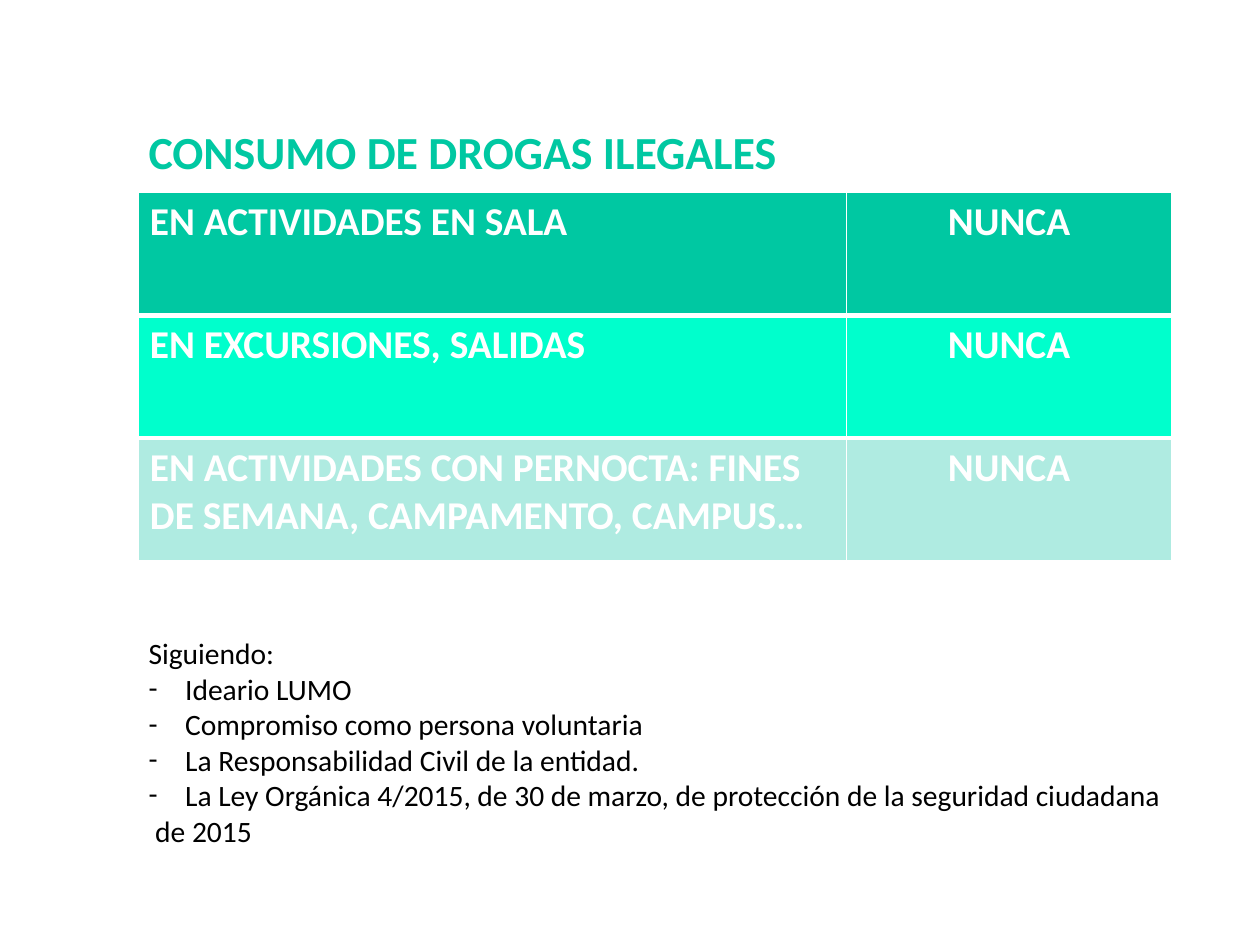
"""Build the slide on the rule about illegal drug use."""
from lxml.etree import SubElement
from pptx import Presentation
from pptx.dml.color import RGBColor as RGB
from pptx.enum.text import PP_ALIGN as Align
from pptx.oxml.ns import qn
from pptx.util import Inches, Pt

WHITE = RGB(0xFF, 0xFF, 0xFF)
BLACK = RGB(0, 0, 0)
GREEN = RGB(0x00, 0xC8, 0xA2)
AQUA = RGB(0x00, 0xFF, 0xCC)
PALE = RGB(0xAF, 0xEB, 0xE1)

RULES = [
    ("EN ACTIVIDADES EN SALA", GREEN),
    ("EN EXCURSIONES, SALIDAS", AQUA),
    ("EN ACTIVIDADES CON PERNOCTA: FINES DE SEMANA, CAMPAMENTO, CAMPUS…", PALE),
]
BASES = [
    ("Siguiendo:", False),
    ("Ideario LUMO", True),
    ("Compromiso como persona voluntaria", True),
    ("La Responsabilidad Civil de la entidad.", True),
    ("La Ley Orgánica 4/2015, de 30 de marzo, de protección de la seguridad ciudadana", True),
    (" de 2015", False),
]


class Deck:
    def __init__(self, wide, high, face):
        self.show = Presentation()
        self.show.slide_width = Inches(wide)
        self.show.slide_height = Inches(high)
        self.face = face
        self.slide = self.show.slides.add_slide(self.show.slide_layouts[6])

    def style(self, para, text, size, color, bold=False):
        para.text = text
        font = para.font
        font.name, font.size, font.bold = self.face, Pt(size), bold
        font.color.rgb = color

    def dash(self, para):
        props = para._p.get_or_add_pPr()
        props.set("marL", str(Inches(0.31)))
        props.set("indent", str(-Inches(0.31)))
        SubElement(props, qn("a:buFont")).set("typeface", self.face)
        SubElement(props, qn("a:buChar")).set("char", "-")

    def edge(self, cell, side, width):
        line = SubElement(cell._tc.get_or_add_tcPr(), qn(side))
        line.set("w", str(Pt(width)))
        fill = SubElement(line, qn("a:solidFill"))
        SubElement(fill, qn("a:srgbClr")).set("val", str(WHITE))

    def text(self, place, lines, size, color, bold=False):
        frame = self.slide.shapes.add_textbox(*map(Inches, place)).text_frame
        frame.word_wrap = True
        for i, (line, dash) in enumerate(lines):
            para = frame.add_paragraph() if i else frame.paragraphs[0]
            if dash:
                self.dash(para)
            self.style(para, line, size, color, bold)

    def table(self, place, widths, rules, answer):
        shape = self.slide.shapes.add_table(
            len(rules), len(widths), *map(Inches, place))
        table = shape.table
        for col, width in zip(table.columns, widths):
            col.width = Inches(width)
        for side, row in zip(("a:lnB", "a:lnT"), table.rows):
            for cell in row.cells:
                self.edge(cell, side, 3)
        for row, (rule, color) in zip(table.rows, rules):
            for cell, word, align in zip(
                    row.cells, (rule, answer), (Align.LEFT, Align.CENTER)):
                cell.fill.solid()
                cell.fill.fore_color.rgb = color
                para = cell.text_frame.paragraphs[0]
                para.alignment = align
                self.style(para, word, 24, WHITE, True)


def main():
    deck = Deck(10.67, 8, "Calibri")
    deck.table((1.17, 1.63, 8.75, 3.12), (6, 2.75), RULES, "NUNCA")
    deck.text((1.16, 1, 5.58, 0.57),
              [("CONSUMO DE DROGAS ILEGALES", False)], 28, GREEN, True)
    deck.text((1.16, 5.33, 8.88, 2.52), BASES, 18, BLACK)
    deck.show.save("out.pptx")


if __name__ == "__main__":
    main()
